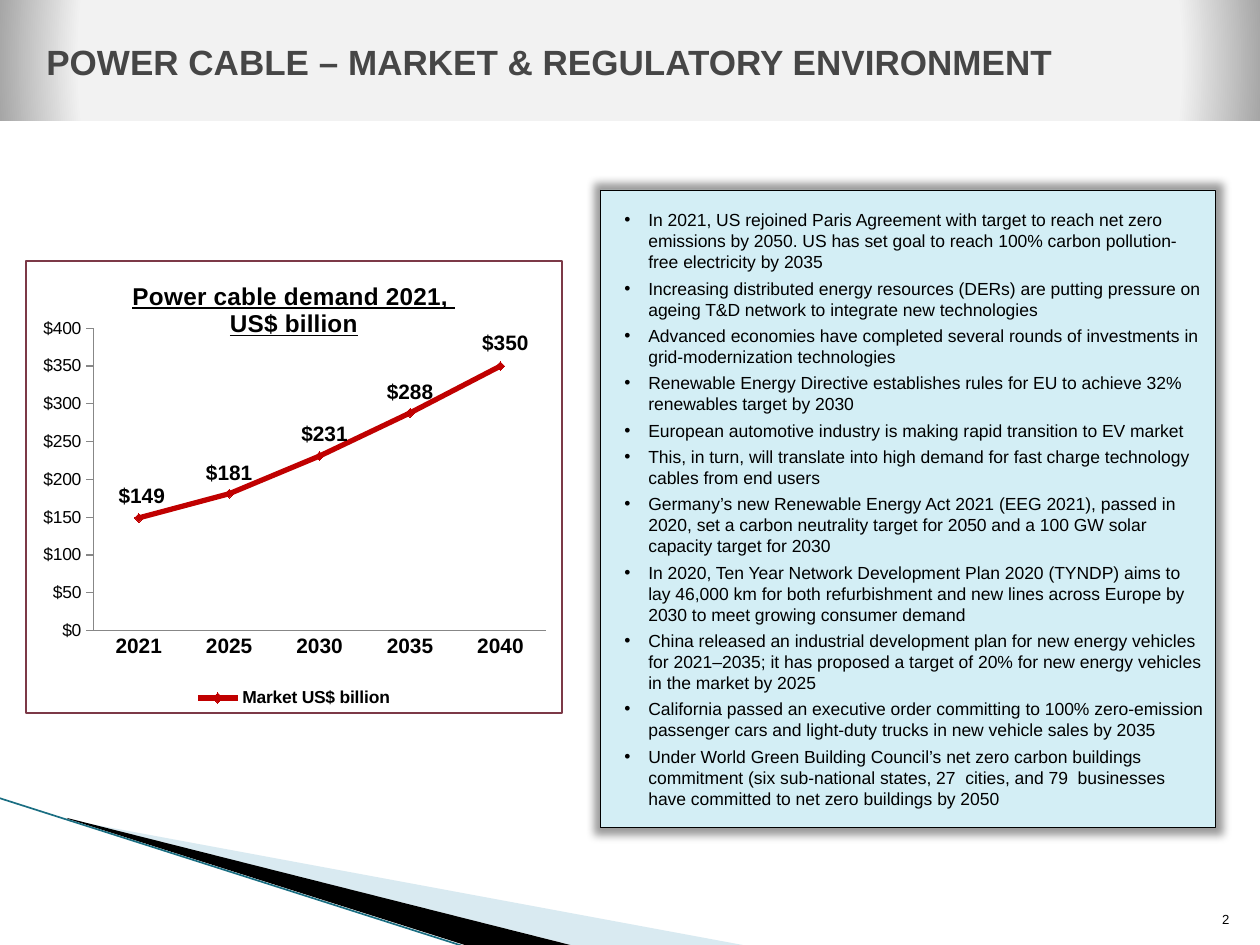
from dataclasses import dataclass

import pptx
import pptx.chart.data
import pptx.dml.color
import pptx.enum.chart
import pptx.enum.shapes
import pptx.enum.text
import pptx.oxml
import pptx.oxml.ns
import pptx.util

SCALE = 914400 / 126
FONT = "Arial"
MONEY = '"$"#,##0'
COLORS = {
    "black": "000000", "white": "FFFFFF", "title": "464646",
    "header": "F2F2F2", "header_edge": "A6A6A6",
    "wedge": "A0CBDC", "edge_line": "1A6E82",
    "panel": "D3EEF5", "frame": "7C3947", "series": "C00000", "axis": "878787",
}
DRAWING = 'xmlns:a="http://schemas.openxmlformats.org/drawingml/2006/main"'
CHART = 'xmlns:c="http://schemas.openxmlformats.org/drawingml/2006/chart"'
SHAPE = pptx.enum.shapes.MSO_SHAPE
ALIGN = pptx.enum.text.PP_ALIGN
ANCHOR = pptx.enum.text.MSO_ANCHOR

BULLETS = [
    "In 2021, US rejoined Paris Agreement with target to reach net zero emissions by 2050. US has set goal to reach 100% carbon pollution-free electricity by 2035",
    "Increasing distributed energy resources (DERs) are putting pressure on ageing T&D network to integrate new technologies",
    "Advanced economies have completed several rounds of investments in grid-modernization technologies",
    "Renewable Energy Directive establishes rules for EU to achieve 32% renewables target by 2030",
    "European automotive industry is making rapid transition to EV market",
    "This, in turn, will translate into high demand for fast charge technology cables from end users",
    "Germany’s new Renewable Energy Act 2021 (EEG 2021), passed in 2020, set a carbon neutrality target for 2050 and a 100 GW solar capacity target for 2030",
    "In 2020, Ten Year Network Development Plan 2020 (TYNDP) aims to lay 46,000 km for both refurbishment and new lines across Europe by 2030 to meet growing consumer demand",
    "China released an industrial development plan for new energy vehicles for 2021–2035; it has proposed a target of 20% for new energy vehicles in the market by 2025",
    "California passed an executive order committing to 100% zero-emission passenger cars and light-duty trucks in new vehicle sales by 2035",
    "Under World Green Building Council’s net zero carbon buildings commitment (six sub-national states, 27  cities, and 79  businesses have committed to net zero buildings by 2050",
]
DEMAND = {"2021": 149, "2025": 181, "2030": 231, "2035": 288, "2040": 350}
LABEL_SHIFTS = {0: (3, -1), 2: (5, -1), 4: (5, -2)}


@dataclass
class Box:
    x: int
    y: int
    w: int
    h: int

    def emu(self) -> list[int]:
        return [px(n) for n in (self.x, self.y, self.w, self.h)]


@dataclass
class Wedge:
    points: list[tuple[int, int]]
    color: str
    opacity: int


@dataclass
class Label:
    box: Box
    text: str
    size: float
    color: str
    bold: bool
    align: ALIGN
    anchor: ANCHOR


WEDGES = [
    Wedge([(69, 820), (748, 946), (575, 946), (69, 819)], "wedge", 40),
    Wedge([(67, 818), (574, 946), (471, 947), (68, 819)], "black", 100),
]
LABELS = [
    Label(Box(1192, 883, 50, 50), "2", 7.5, "black", False, ALIGN.RIGHT, ANCHOR.BOTTOM),
    Label(Box(34, 23, 1134, 76), "POWER CABLE – MARKET & REGULATORY ENVIRONMENT",
          20, "title", True, ALIGN.LEFT, ANCHOR.MIDDLE),
]


def px(n: int) -> int:
    return round(n * SCALE)


def rgb(name: str) -> pptx.dml.color.RGBColor:
    return pptx.dml.color.RGBColor.from_string(COLORS[name])


def apply(obj, formats: dict) -> None:
    for name, value in formats.items():
        setattr(obj, name, value)


def set_font(font, size: float, color: str = "black", bold: bool = False, **more) -> None:
    apply(font, {"name": FONT, "size": pptx.util.Pt(size), "bold": bold, **more})
    font.color.rgb = rgb(color)


def set_line(line, color: str, width: float) -> None:
    line.color.rgb = rgb(color)
    line.width = pptx.util.Pt(width)


def xml(text: str):
    return pptx.oxml.parse_xml(text)


def add_wedge(s, wedge: Wedge) -> None:
    builder = s.shapes.build_freeform(*wedge.points[0], scale=SCALE)
    builder.add_line_segments(wedge.points[1:])
    sp = builder.convert_to_shape()
    sp.shadow.inherit = False
    sp.fill.solid()
    sp.fill.fore_color.rgb = rgb(wedge.color)
    sp.line.fill.background()
    if wedge.opacity < 100:
        color = sp.fill._xPr.find(".//" + pptx.oxml.ns.qn("a:srgbClr"))
        color.append(xml(f'<a:alpha {DRAWING} val="{wedge.opacity * 1000}"/>'))


def add_edge_line(s) -> None:
    line = s.shapes.add_connector(pptx.enum.shapes.MSO_CONNECTOR.STRAIGHT,
                                  px(-1), px(798), px(469), px(948))
    set_line(line.line, "edge_line", 0.95)
    line._element.spPr.append(xml(f"<a:effectLst {DRAWING}/>"))


def add_header(s) -> None:
    sp = s.shapes.add_shape(SHAPE.RECTANGLE, *Box(0, 0, 1260, 121).emu())
    sp.shadow.inherit = False
    sp.line.fill.background()
    stops = "".join(f'<a:gs pos="{pos}000"><a:srgbClr val="{COLORS[name]}"/></a:gs>'
                    for pos, name in ((87, "header"), (100, "header_edge")))
    sp._element.spPr.find(pptx.oxml.ns.qn("a:prstGeom")).addnext(xml(
        f'<a:gradFill {DRAWING} rotWithShape="1"><a:gsLst>{stops}</a:gsLst><a:path path="circle">'
        '<a:fillToRect l="50000" t="50000" r="50000" b="50000"/></a:path></a:gradFill>'))


def add_label(s, label: Label) -> None:
    tf = s.shapes.add_textbox(*label.box.emu()).text_frame
    apply(tf, {"word_wrap": True, "vertical_anchor": label.anchor})
    p = tf.paragraphs[0]
    apply(p, {"text": label.text, "alignment": label.align})
    set_font(p.runs[0].font, label.size, label.color, label.bold)


def add_panel(s, box: Box, bullets: list[str]) -> None:
    sp = s.shapes.add_shape(SHAPE.RECTANGLE, *box.emu())
    sp.fill.solid()
    sp.fill.fore_color.rgb = rgb("panel")
    set_line(sp.line, "black", 0.5)
    sp._element.spPr.append(xml(
        f'<a:effectLst {DRAWING}><a:outerShdw blurRad="63500" dist="0" dir="0" algn="ctr" '
        f'sx="102000" sy="102000" rotWithShape="0"><a:srgbClr val="{COLORS["black"]}">'
        '<a:alpha val="40000"/></a:srgbClr></a:outerShdw></a:effectLst>'))
    tf = sp.text_frame
    apply(tf, {"word_wrap": True, "vertical_anchor": ANCHOR.MIDDLE})
    for i, text in enumerate(bullets):
        p = tf.add_paragraph() if i else tf.paragraphs[0]
        pPr = p._p.get_or_add_pPr()
        pPr.set("marL", str(px(35)))
        pPr.set("indent", str(-px(24)))
        for tag in (f'buClr {DRAWING}><a:srgbClr val="{COLORS["black"]}"/></a:buClr>',
                    f'buFont {DRAWING} typeface="{FONT}"/>', f'buChar {DRAWING} char="•"/>'):
            pPr.append(xml("<a:" + tag))
        p.alignment = ALIGN.LEFT
        if i:
            p.space_before = pptx.util.Pt(3)
        r = p.add_run()
        r.text = text
        set_font(r.font, 10)


def set_plot_area(chart, x: float, y: float, w: float, h: float) -> None:
    """Fix the inner plot area, in fractions of the chart."""
    area = chart._chartSpace.chart.plotArea
    for old in area.findall(pptx.oxml.ns.qn("c:layout")):
        area.remove(old)
    sizes = "".join(f'<c:{k} val="{v}"/>' for k, v in zip("xywh", (x, y, w, h)))
    area.insert(0, xml(
        f'<c:layout {CHART}><c:manualLayout><c:layoutTarget val="inner"/><c:xMode val="edge"/>'
        f'<c:yMode val="edge"/>{sizes}</c:manualLayout></c:layout>'))


def shift_point_label(point, dx: float, dy: float) -> None:
    """Move one value label by fractions of the chart."""
    label = point.data_label
    set_font(label.font, 12, bold=True)
    label.position = pptx.enum.chart.XL_LABEL_POSITION.ABOVE
    idx = label._get_or_add_dLbl().find(pptx.oxml.ns.qn("c:idx"))
    idx.addnext(xml(f"<c:numFmt {CHART} formatCode='{MONEY}' sourceLinked='0'/>"))
    idx.addnext(xml(f'<c:layout {CHART}><c:manualLayout><c:x val="{dx:.4f}"/>'
                    f'<c:y val="{dy:.4f}"/></c:manualLayout></c:layout>'))


def add_demand_chart(s, box: Box) -> None:
    enums = pptx.enum.chart
    data = pptx.chart.data.CategoryChartData()
    data.categories = list(DEMAND)
    data.add_series("Market US$ billion", list(DEMAND.values()))
    chart = s.shapes.add_chart(enums.XL_CHART_TYPE.LINE_MARKERS, *box.emu(), data).chart
    set_font(chart.font, 10)
    chart._chartSpace.chart.addnext(xml(
        f'<c:spPr {CHART} {DRAWING}><a:solidFill><a:srgbClr val="{COLORS["white"]}"/></a:solidFill>'
        f'<a:ln w="15875"><a:solidFill><a:srgbClr val="{COLORS["frame"]}"/></a:solidFill></a:ln></c:spPr>'))
    apply(chart, {"has_title": True, "has_legend": True})
    tf = chart.chart_title.text_frame
    tf.text = "Power cable demand 2021, \nUS$ billion"
    for p in tf.paragraphs:
        set_font(p.runs[0].font, 14, bold=True, underline=True)
    apply(chart.legend, {"position": enums.XL_LEGEND_POSITION.BOTTOM, "include_in_layout": False})
    set_font(chart.legend.font, 10, bold=True)
    set_plot_area(chart, 0.126, 0.149, 0.844, 0.669)

    money = {"number_format": MONEY, "number_format_is_linked": False}
    ticks = enums.XL_TICK_MARK
    for axis, size, bold, mark in ((chart.category_axis, 12, True, ticks.NONE),
                                   (chart.value_axis, 10, False, ticks.OUTSIDE)):
        apply(axis, {"has_major_gridlines": False, "major_tick_mark": mark,
                     "minor_tick_mark": ticks.NONE})
        set_font(axis.tick_labels.font, size, bold=bold)
        set_line(axis.format.line, "axis", 0.75)
    apply(chart.value_axis, {"minimum_scale": 0, "maximum_scale": 400, "major_unit": 50})
    apply(chart.value_axis.tick_labels, money)

    plot = chart.plots[0]
    plot.vary_by_categories = False
    series = plot.series[0]
    series.smooth = False
    set_line(series.format.line, "series", 3)
    apply(series.marker, {"style": enums.XL_MARKER_STYLE.DIAMOND, "size": 5})
    series.marker.format.fill.solid()
    series.marker.format.fill.fore_color.rgb = rgb("series")
    set_line(series.marker.format.line, "series", 0.75)
    labels = series.data_labels
    apply(labels, {"show_value": True, "position": enums.XL_LABEL_POSITION.ABOVE, **money})
    set_font(labels.font, 12, bold=True)
    for i, (dx, dy) in LABEL_SHIFTS.items():
        shift_point_label(series.points[i], dx / box.w, dy / box.h)


def main() -> None:
    prs = pptx.Presentation()
    apply(prs, {"slide_width": px(1260), "slide_height": px(945)})
    s = prs.slides.add_slide(prs.slide_layouts[6])
    for wedge in WEDGES:
        add_wedge(s, wedge)
    add_edge_line(s)
    add_header(s)
    for label in LABELS:
        add_label(s, label)
    add_demand_chart(s, Box(25, 260, 538, 454))
    add_panel(s, Box(601, 190, 615, 638), BULLETS)
    prs.save("out.pptx")


if __name__ == "__main__":
    main()
